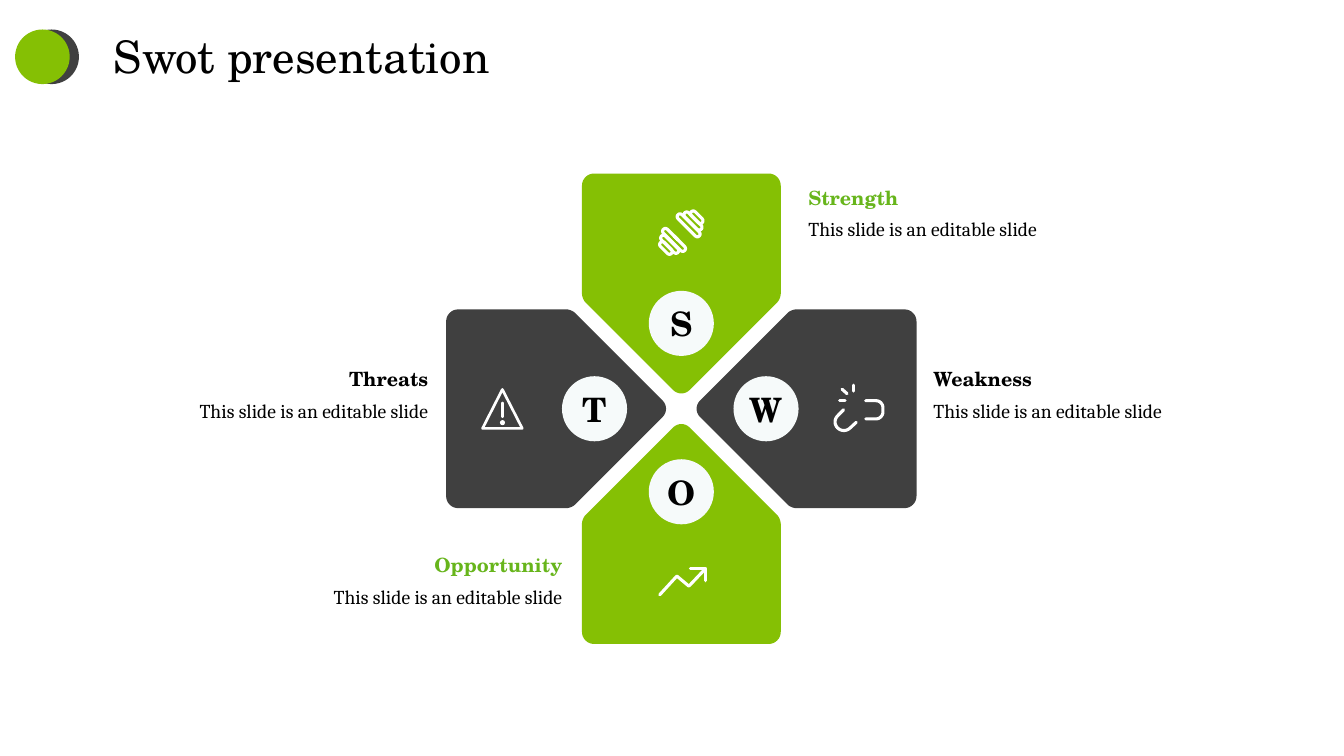
from math import dist
from lxml.etree import SubElement
from pptx import Presentation
from pptx.dml.color import RGBColor
from pptx.enum.shapes import MSO_CONNECTOR, MSO_SHAPE
from pptx.enum.text import MSO_ANCHOR, MSO_AUTO_SIZE, PP_ALIGN
from pptx.oxml.ns import qn
from pptx.util import Pt

GREEN = RGBColor(0x85, 0xC0, 0x04)
LEAF = RGBColor(0x67, 0xB5, 0x1B)
DARK = RGBColor(0x40, 0x40, 0x40)
PALE = RGBColor(0xF6, 0xFA, 0xFA)
BLACK = RGBColor(0, 0, 0)
WHITE = RGBColor(255, 255, 255)
SERIF, BODY = "TeX Gyre Schola", "Cambria"
NOTE = "This slide is an editable slide"

# Petal outline as (across, outward, corner cut), measured from the hub
PETAL = [(0, 7.5, 8.2), (71, 78.5, 3.6), (71, 168, 8.6),
         (-71, 168, 8.6), (-71, 78.5, 3.6)]


# Basic parts
def write(para, text, font=SERIF, size=14, color=BLACK, bold=False,
          align=PP_ALIGN.LEFT, before=0):
    para.alignment = align
    para.space_before = Pt(before)
    run = para.add_run()
    run.text = text
    run.font.name = font
    run.font.size = Pt(size)
    run.font.bold = bold
    run.font.color.rgb = color


def paint(shape, color):
    shape.shadow.inherit = False
    shape.fill.solid()
    shape.fill.fore_color.rgb = color
    shape.line.fill.background()


def pen(shape, width):
    """Draw the outline as a white pen stroke with round ends."""
    shape.line.color.rgb = WHITE
    shape.line.width = Pt(width)
    ln = shape.element.spPr.find(qn("a:ln"))
    ln.set("cap", "rnd")
    SubElement(ln, qn("a:round"))


def disc(slide, x, y, size, color):
    half = size / 2
    shape = slide.shapes.add_shape(MSO_SHAPE.OVAL, Pt(x - half), Pt(y - half),
                                   Pt(size), Pt(size))
    paint(shape, color)
    return shape


def bend(before, peak, after, cut):
    """Return points along a rounded corner."""
    def back(end, part):
        share = part / dist(peak, end)
        return [p + (e - p) * share for p, e in zip(peak, end)]

    a, b = back(before, cut), back(before, cut * .45)
    c, d = back(after, cut * .45), back(after, cut)
    steps = [i / 8 for i in range(9)]
    return [tuple((1 - t) ** 3 * p + 3 * t * (1 - t) ** 2 * q
                  + 3 * t * t * (1 - t) * r + t ** 3 * s
                  for p, q, r, s in zip(a, b, c, d)) for t in steps]


def outline(slide, points, close):
    dots = [(Pt(x), Pt(y)) for x, y in points]
    form = slide.shapes.build_freeform(*dots[0], scale=1.0)
    form.add_line_segments(dots[1:], close=close)
    shape = form.convert_to_shape()
    shape.shadow.inherit = False
    return shape


def stroke(slide, x, y, points, width=2.2, cut=0, close=False):
    """Draw an open or closed pen line around the centre (x, y)."""
    points = [(x + u, y + v) for u, v in points]
    if len(points) == 2:
        ends = [Pt(n) for point in points for n in point]
        shape = slide.shapes.add_connector(MSO_CONNECTOR.STRAIGHT, *ends)
        pen(shape, width)
        SubElement(shape.element.spPr, qn("a:effectLst"))
        return
    if cut:
        inner = [bend(*trio, cut) for trio in zip(points, points[1:], points[2:])]
        points = [points[0], *sum(inner, []), points[-1]]
    shape = outline(slide, points, close)
    shape.fill.background()
    pen(shape, width)


# Icons
def weight(slide, x, y):
    for u, v in ((-5.2, 2.4), (-2.4, 5.2)):
        stroke(slide, x, y, [(u, v), (-v, -u)])
    for side in (-1, 1):
        for off, size in ((5.2, 21.6), (8.3, 16.7), (11, 11.1)):
            plate = slide.shapes.add_shape(
                MSO_SHAPE.ROUNDED_RECTANGLE, Pt(x + side * off - size / 2),
                Pt(y - side * off - 2), Pt(size), Pt(4))
            plate.adjustments[0] = .5
            plate.rotation = 45
            plate.shadow.inherit = False
            plate.fill.background()
            pen(plate, 2.2)


def link(slide, x, y):
    for spark in ([(-11.9, -14), (-8.3, -10.8)], [(-3.6, -16.9), (-3.6, -12.6)],
                  [(-13.7, -5.8), (-9.7, -5.8)]):
        stroke(slide, x, y, spark)
    stroke(slide, x, y, [(-10.8, .7), (-19.4, 9.4), (-10.8, 18), (-1.8, 9.7)], cut=6)
    stroke(slide, x, y, [(5, -5.8), (17.3, -5.8), (17.3, 7.2), (5, 7.2)], cut=5)


def trend(slide, x, y):
    stroke(slide, x, y, [(-15.5, 9.4), (-3.2, -4), (5.4, 3.2), (17.3, -9.4)])
    stroke(slide, x, y, [(6.5, -9.4), (17.3, -9.4), (17.3, -.7)])


def alert(slide, x, y):
    stroke(slide, x, y, [(0, -13.8), (14.2, 14), (-14.2, 14)], width=1.9, close=True)
    stroke(slide, x, y, [(0, -4.3), (0, 5.8)], width=1.7)
    disc(slide, x, y + 9.9, 3.6, WHITE)


# Regions
def header(slide, x, y, title):
    for shift, color in ((6.6, DARK), (0, GREEN)):
        disc(slide, x + 19.5 + shift, y + 23.3, 39, color)
    box = slide.shapes.add_textbox(Pt(x + 63.4), Pt(y), Pt(819.4), Pt(46))
    box.text_frame.word_wrap = True
    write(box.text_frame.paragraphs[0], title, size=32)


def petal(slide, x, y, way, color, letter, reach, icon, far):
    """Draw one arm of the cross, pointing from the hub (x, y) along way."""
    dx, dy = way

    def place(u, v):
        return x + dx * v + dy * u, y + dy * v - dx * u

    points = []
    for i, (u, v, cut) in enumerate(PETAL):
        near, after = PETAL[i - 1][:2], PETAL[(i + 1) % len(PETAL)][:2]
        points += bend(place(*near), place(u, v), place(*after), cut)
    paint(outline(slide, points, True), color)

    frame = disc(slide, *place(0, reach), 46.5, PALE).text_frame
    frame.margin_left = frame.margin_right = 0
    frame.vertical_anchor = MSO_ANCHOR.MIDDLE
    frame.word_wrap = False
    write(frame.paragraphs[0], letter, size=24, bold=True, align=PP_ALIGN.CENTER)
    icon(slide, *place(0, far))


def label(slide, x, y, wide, head, color, align):
    box = slide.shapes.add_textbox(Pt(x), Pt(y), Pt(wide), Pt(40.3))
    frame = box.text_frame
    frame.word_wrap = True
    frame.auto_size = MSO_AUTO_SIZE.SHAPE_TO_FIT_TEXT
    frame.margin_left = frame.margin_right = 0
    frame.margin_top = frame.margin_bottom = 0
    write(frame.paragraphs[0], head, color=color, bold=True, align=align, before=6)
    write(frame.add_paragraph(), NOTE, font=BODY, align=align, before=6)


def cross(slide, x, y):
    left, right = PP_ALIGN.LEFT, PP_ALIGN.RIGHT
    arms = [((0, -1), GREEN, "S", 61, weight, 125.8),
            ((1, 0), DARK, "W", 60.5, link, 126.7),
            ((0, 1), GREEN, "O", 59.3, trend, 123.5),
            ((-1, 0), DARK, "T", 62, alert, 127.8)]
    for arm in arms:
        petal(slide, x, y, *arm)
    notes = [(90.7, -159.5, 167, "Strength", LEAF, left),
             (180, -29.9, 167, "Weakness", BLACK, left),
             (-264.9, 103.3, 180, "Opportunity", LEAF, right),
             (-360.7, -29.9, 180, "Threats", BLACK, right)]
    for dx, dy, *rest in notes:
        label(slide, x + dx, y + dy, *rest)


def main():
    deck = Presentation()
    deck.slide_width, deck.slide_height = Pt(960), Pt(540)
    slide = deck.slides.add_slide(deck.slide_layouts[6])
    header(slide, 10.8, 17.3, "Swot presentation")
    cross(slide, 486.7, 292)
    deck.save("out.pptx")


if __name__ == "__main__":
    main()
